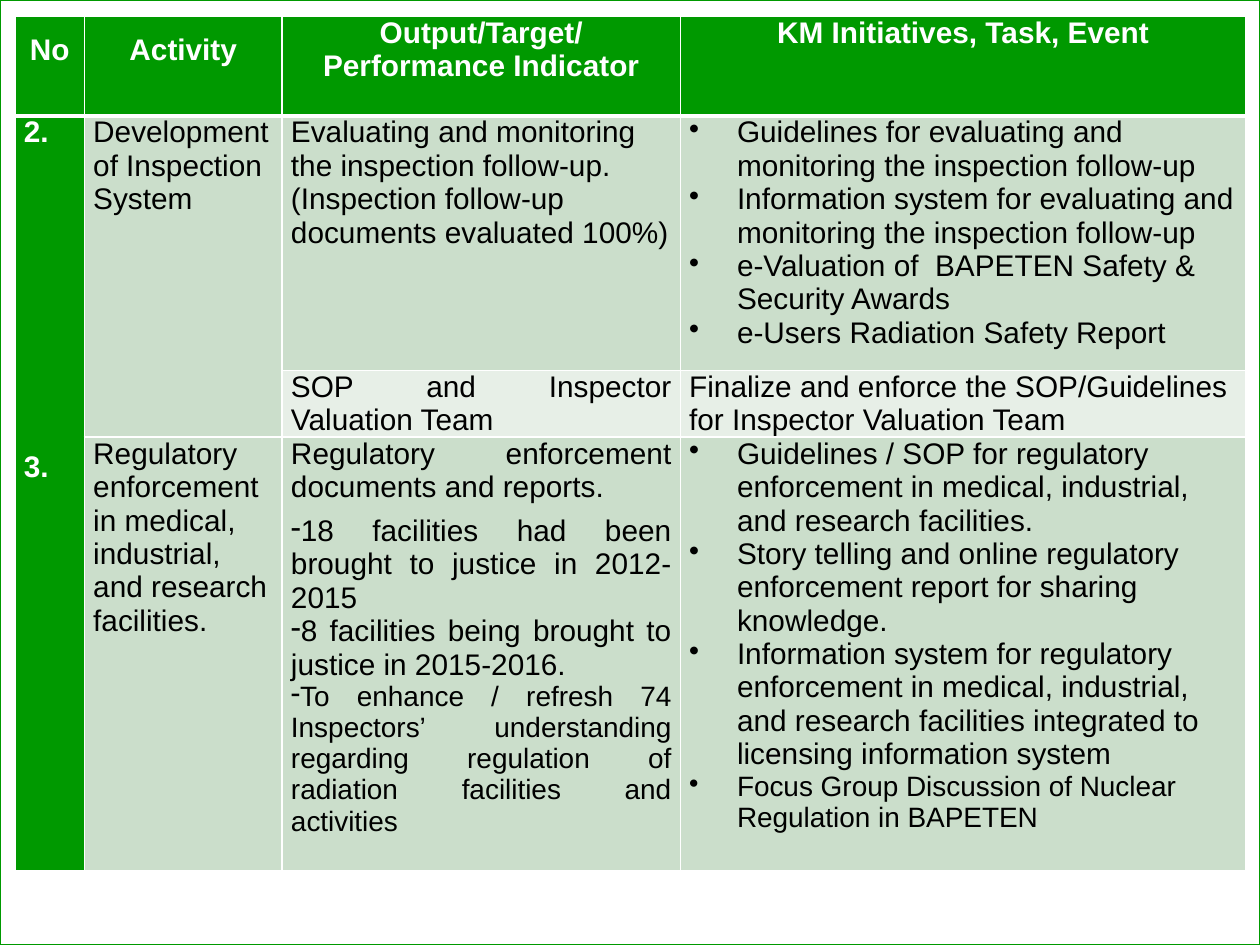
from dataclasses import dataclass

from lxml.etree import SubElement
from pptx import Presentation
from pptx.dml.color import RGBColor
from pptx.enum.shapes import MSO_SHAPE as Shape
from pptx.enum.text import PP_ALIGN as Align
from pptx.oxml import parse_xml
from pptx.oxml.ns import nsdecls, qn
from pptx.util import Inches, Pt

WHITE, BLACK = "FFFFFF", "000000"
GREEN, PALE, PALER = "009900", "CBDECB", "E7EFE7"


def color(hex_code):
    return RGBColor.from_string(hex_code)


@dataclass
class Para:
    text: str
    bullet: str = ""
    indent: float = 0
    size: int = 17
    before: float = 0
    after: float = 0
    line: float = 1.0
    align: Align = Align.LEFT


def bullets(*texts, **options):
    return [Para(text, bullet="•", indent=0.38, **options) for text in texts]


def dashes(*texts, **options):
    return [Para(text, bullet="-", align=Align.JUSTIFY, **options) for text in texts]


class SlideBuilder:
    font = "Arial"

    def __init__(self, slide):
        self.slide = slide

    def frame(self, width, height):
        border = self.slide.shapes.add_shape(Shape.RECTANGLE, 0, 0, width, height)
        border.shadow.inherit = False
        border.fill.solid()
        border.fill.fore_color.rgb = color(WHITE)
        border.line.color.rgb = color(GREEN)
        border.line.width = Pt(0.75)

    def table(self, left, top, widths, heights):
        grid = self.slide.shapes.add_table(
            len(heights), len(widths), Inches(left), Inches(top),
            Inches(sum(widths)), Inches(sum(heights))).table
        grid.horz_banding = False
        for column, width in zip(grid.columns, widths):
            column.width = Inches(width)
        for row, height in zip(grid.rows, heights):
            row.height = Inches(height)
        return grid

    def borders(self, cell, top, bottom):
        """Put white edges around a cell; the widths are in points."""
        edges = (("L", 1), ("R", 1), ("T", top), ("B", bottom))
        for place, (side, width) in enumerate(edges):
            cell._tc.get_or_add_tcPr().insert(place, parse_xml(
                f'<a:ln{side} {nsdecls("a")} w="{Pt(width)}"><a:solidFill>'
                f'<a:srgbClr val="{WHITE}"/></a:solidFill></a:ln{side}>'))

    def paint(self, cell, fill, top=1, bottom=1):
        cell.fill.solid()
        cell.fill.fore_color.rgb = color(fill)
        cell.margin_left = cell.margin_right = Inches(0.07)
        cell.margin_top = cell.margin_bottom = 0
        self.borders(cell, top, bottom)

    def fill_text(self, cell, paras, text_color=BLACK, bold=False):
        cell.text_frame.text = "\n".join(para.text for para in paras)
        for paragraph, para in zip(cell.text_frame.paragraphs, paras):
            if para.bullet:
                props = paragraph._p.get_or_add_pPr()
                props.set("marL", str(Inches(para.indent)))
                props.set("indent", str(-Inches(para.indent)))
                SubElement(props, qn("a:buChar"), char=para.bullet)
            paragraph.alignment = para.align
            paragraph.line_spacing = para.line
            paragraph.space_before = Pt(para.before)
            paragraph.space_after = Pt(para.after)
            for run in paragraph.runs:
                run.font.name = self.font
                run.font.size = Pt(para.size)
                run.font.bold = bold
                run.font.color.rgb = color(text_color)


HEADERS = [
    [Para("No", line=1.5, align=Align.CENTER)],
    [Para("Activity", line=1.5, align=Align.CENTER)],
    [Para("Output/Target/", align=Align.CENTER),
     Para("Performance Indicator", align=Align.CENTER)],
    [Para("KM Initiatives, Task, Event", align=Align.CENTER)],
]
NUMBERS = [Para("2."), Para("3.", before=172)]
# (row, column) of each body cell
BODY = {
    (1, 1): [Para("Development of Inspection System", after=6)],
    (1, 2): [Para("Evaluating and monitoring the inspection follow-up. "
                  "(Inspection follow-up documents evaluated 100%)", after=6)],
    (1, 3): bullets(
        "Guidelines for evaluating and monitoring the inspection follow-up",
        "Information system for evaluating and monitoring the inspection follow-up",
        "e-Valuation of  BAPETEN Safety & Security Awards",
        "e-Users Radiation Safety Report"),
    (2, 2): [Para("SOP and Inspector Valuation Team", after=6, align=Align.JUSTIFY)],
    (2, 3): [Para("Finalize and enforce the SOP/Guidelines for Inspector "
                  "Valuation Team", after=6)],
    (3, 1): [Para("Regulatory enforcement in medical, industrial, and research "
                  "facilities.", after=6)],
    (3, 2): [
        Para("Regulatory enforcement documents and reports.", after=6,
             align=Align.JUSTIFY),
        *dashes("18 facilities had been brought to justice in 2012-2015",
                "8 facilities being brought to justice in 2015-2016."),
        *dashes("To enhance / refresh 74 Inspectors’ understanding regarding "
                "regulation of radiation facilities and activities", size=16)],
    (3, 3): [
        *bullets(
            "Guidelines / SOP for regulatory enforcement in medical, industrial, "
            "and research facilities.",
            "Story telling and online regulatory enforcement report for sharing "
            "knowledge.",
            "Information system for regulatory enforcement in medical, industrial, "
            "and research facilities integrated to licensing information system"),
        *bullets("Focus Group Discussion of Nuclear Regulation in BAPETEN", size=16)],
}


def main():
    deck = Presentation()
    deck.slide_width, deck.slide_height = Inches(10), Inches(7.5)
    builder = SlideBuilder(deck.slides.add_slide(deck.slide_layouts[6]))
    builder.frame(deck.slide_width, deck.slide_height)

    plan = builder.table(0.12, 0.13, [0.55, 1.57, 3.16, 4.49],
                         [0.79, 2.02, 0.53, 3.44])
    for row in range(4):
        for column in range(4):
            if row == 0 or column == 0:
                fill = GREEN
            else:
                fill = PALER if row == 2 and column > 1 else PALE
            builder.paint(plan.cell(row, column), fill,
                          top=3 if row == 1 else 1, bottom=3 if row == 0 else 1)
    plan.cell(1, 0).merge(plan.cell(3, 0))
    plan.cell(1, 1).merge(plan.cell(2, 1))

    for column, header in enumerate(HEADERS):
        builder.fill_text(plan.cell(0, column), header, WHITE, bold=True)
    builder.fill_text(plan.cell(1, 0), NUMBERS, WHITE, bold=True)
    for (row, column), paras in BODY.items():
        builder.fill_text(plan.cell(row, column), paras)

    deck.save("out.pptx")


if __name__ == "__main__":
    main()
